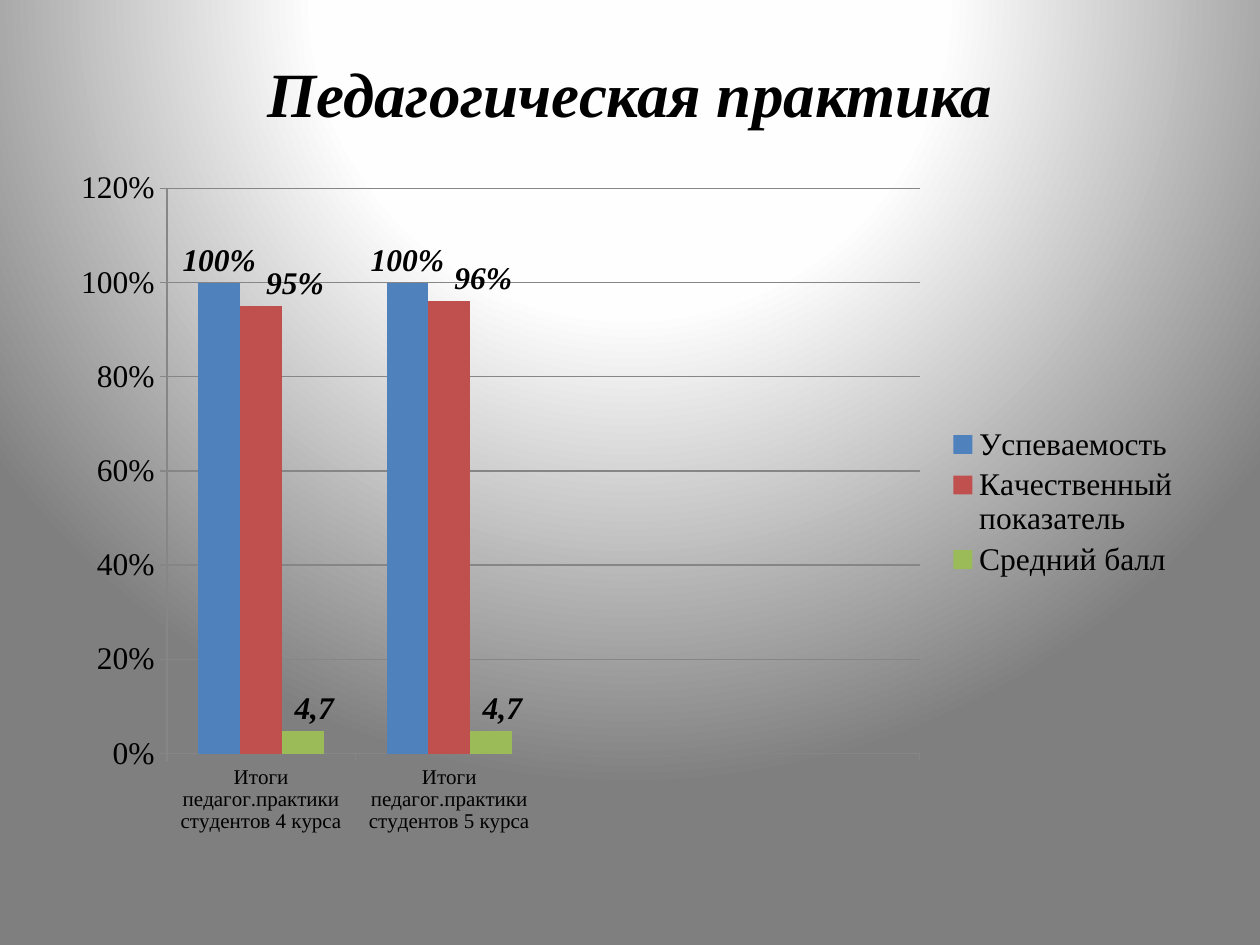
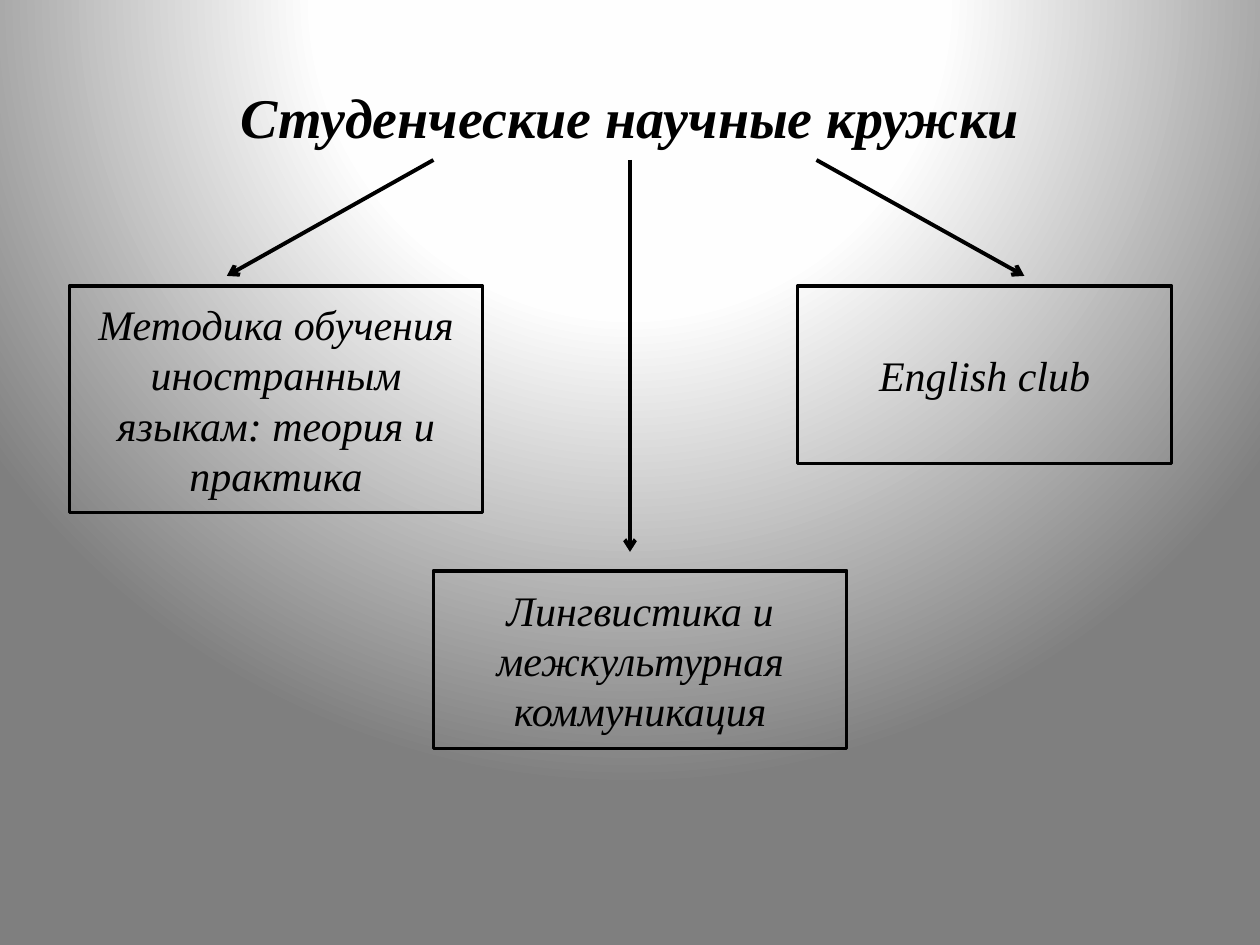
from dataclasses import dataclass

from lxml.etree import SubElement
from pptx import Presentation
from pptx.chart.data import CategoryChartData
from pptx.dml.color import RGBColor
from pptx.enum.chart import XL_CHART_TYPE, XL_LABEL_POSITION, XL_LEGEND_POSITION, XL_TICK_MARK
from pptx.enum.shapes import MSO_CONNECTOR, MSO_SHAPE
from pptx.enum.text import MSO_ANCHOR, PP_ALIGN
from pptx.oxml import parse_xml
from pptx.oxml.ns import nsdecls, qn
from pptx.util import Inches, Pt


@dataclass(frozen=True)
class Theme:
    font: str = "Times New Roman"
    ink: str = "000000"
    grid: str = "868686"
    glow: tuple = ((0, "FFFFFF"), (40, "FEFEFE"), (100, "7F7F7F"))
    series: tuple = ("4F81BD", "C0504D", "9BBB59")
    chart_title: int = 36
    clubs_title: int = 32
    club: int = 24
    chart_text: int = 18
    category: int = 12
    box_line: float = 2
    arrow_line: float = 2.25


THEME = Theme()

COURSES = [f"Итоги педагог.практики студентов {year} курса" for year in (4, 5)]
RESULTS = [
    ("Успеваемость", (1, 1), "0%"),
    ("Качественный показатель", (0.95, 0.96), "0%"),
    ("Средний балл", (0.047, 0.047), "0.00%"),
]
AVERAGE_GRADE = "4,7"
LABEL_SHIFTS = [0.03, 0.03, 0.01, 0.01]

CLUBS = [
    ("Методика обучения иностранным языкам: теория и практика", (0.55, 2.27, 3.28, 1.8)),
    ("Лингвистика и межкультурная коммуникация", (3.44, 4.53, 3.28, 1.41)),
    ("English club", (6.33, 2.27, 2.97, 1.41)),
]
ARROW_TOP = 1.27
ARROWS = [
    (3.44, ARROW_TOP, 1.8, 2.19),
    (5, ARROW_TOP, 5, 4.38),
    (6.48, ARROW_TOP, 8.13, 2.19),
]


def inches(values):
    return [Inches(value) for value in values]


def style_font(font, size, **format_values):
    values = {"name": THEME.font, "size": Pt(size), **format_values}
    for attribute, value in values.items():
        setattr(font, attribute, value)
    font.color.rgb = RGBColor.from_string(THEME.ink)


def style_line(line, color, width):
    line.color.rgb = RGBColor.from_string(color)
    line.width = Pt(width)


def set_background(master):
    master.background.fill.solid()
    stops = "".join(
        f'<a:gs pos="{place * 1000}"><a:srgbClr val="{color}"/></a:gs>'
        for place, color in THEME.glow
    )
    glow = parse_xml(
        f'<a:gradFill {nsdecls("a")} rotWithShape="1"><a:gsLst>{stops}</a:gsLst>'
        '<a:path path="circle"><a:fillToRect l="50000" t="-80000" r="50000" b="180000"/>'
        "</a:path></a:gradFill>"
    )
    background = master.element.xpath(".//p:bgPr")[0]
    background.replace(background[0], glow)


def write_centred(shape, text, size, **format_values):
    frame = shape.text_frame
    frame.word_wrap = True
    frame.vertical_anchor = MSO_ANCHOR.MIDDLE
    paragraph = frame.paragraphs[0]
    paragraph.alignment = PP_ALIGN.CENTER
    run = paragraph.add_run()
    run.text = text
    style_font(run.font, size, italic=True, **format_values)


def add_title(slide, text, size, height):
    title = slide.shapes.add_textbox(*inches((0.5, 0.3, 9, height)))
    write_centred(title, text, size, bold=True)


def add_club(slide, name, place):
    club = slide.shapes.add_shape(MSO_SHAPE.RECTANGLE, *inches(place))
    club.shadow.inherit = False
    club.fill.background()
    style_line(club.line, THEME.ink, THEME.box_line)
    write_centred(club, name, THEME.club)


def add_arrow(slide, ends):
    arrow = slide.shapes.add_connector(MSO_CONNECTOR.STRAIGHT, *inches(ends))
    style_line(arrow.line, THEME.ink, THEME.arrow_line)
    SubElement(arrow.get_or_add_ln(), qn("a:tailEnd"), type="arrow")
    SubElement(arrow.element.spPr, qn("a:effectLst"))


def manual_layout(**values):
    settings = "".join(f'<c:{key} val="{value}"/>' for key, value in values.items())
    return parse_xml(
        f'<c:layout {nsdecls("c")}><c:manualLayout>{settings}</c:manualLayout></c:layout>'
    )


def style_axes(chart):
    for axis, size in ((chart.category_axis, THEME.category), (chart.value_axis, THEME.chart_text)):
        style_font(axis.tick_labels.font, size)
        style_line(axis.format.line, THEME.grid, 0.75)
        axis.major_tick_mark = XL_TICK_MARK.OUTSIDE
    scale = chart.value_axis
    for attribute, value in {"minimum_scale": 0, "maximum_scale": 1.2, "major_unit": 0.2}.items():
        setattr(scale, attribute, value)
    scale.tick_labels.number_format = "0%"
    scale.tick_labels.number_format_is_linked = False
    style_line(scale.major_gridlines.format.line, THEME.grid, 0.75)


def style_series(series, color, number_format):
    series.format.fill.solid()
    series.format.fill.fore_color.rgb = RGBColor.from_string(color)
    series.invert_if_negative = False
    labels = series.data_labels
    label_values = {
        "show_value": True,
        "number_format": number_format,
        "number_format_is_linked": False,
        "position": XL_LABEL_POSITION.OUTSIDE_END,
    }
    for attribute, value in label_values.items():
        setattr(labels, attribute, value)
    style_font(labels.font, THEME.chart_text, bold=True, italic=True)


def shift_labels(chart):
    quality, grade = list(chart.plots[0].series)[1:]
    for series in (quality, grade):
        for index in range(len(COURSES)):
            label = series.points[index].data_label
            if series is grade:
                label.text_frame.text = AVERAGE_GRADE
                font = label.text_frame.paragraphs[0].runs[0].font
            else:
                font = label.font
            style_font(font, THEME.chart_text, bold=True, italic=True)
            label.position = XL_LABEL_POSITION.OUTSIDE_END
    for label, shift in zip(chart.element.xpath(".//c:dLbl"), LABEL_SHIFTS):
        label.insert(1, manual_layout(x=shift, y=0))


def add_results_chart(slide):
    data = CategoryChartData()
    data.categories = COURSES + ["", ""]
    for name, values, number_format in RESULTS:
        data.add_series(name, values + (None, None), number_format)
    chart = slide.shapes.add_chart(
        XL_CHART_TYPE.COLUMN_CLUSTERED, *inches((0.47, 1.25, 9, 5.47)), data
    ).chart
    style_font(chart.font, THEME.chart_text)
    chart.has_title = False
    chart.has_legend = True
    chart.legend.position = XL_LEGEND_POSITION.RIGHT
    chart.legend.include_in_layout = False
    style_font(chart.legend.font, THEME.chart_text)
    plot = chart.plots[0]
    for attribute, value in {"gap_width": 150, "overlap": 0, "vary_by_categories": False}.items():
        setattr(plot, attribute, value)
    style_axes(chart)
    for series, color, (_, _, number_format) in zip(plot.series, THEME.series, RESULTS):
        style_series(series, color, number_format)
    shift_labels(chart)
    plot_area = chart.element.xpath(".//c:plotArea")[0]
    for automatic in plot_area.findall(qn("c:layout")):
        plot_area.remove(automatic)
    plot_area.insert(
        0,
        manual_layout(
            layoutTarget="inner", xMode="edge", yMode="edge", x=0.095, y=0.045, w=0.664, h=0.82
        ),
    )


def main():
    deck = Presentation()
    deck.slide_width, deck.slide_height = inches((10, 7.5))
    set_background(deck.slide_master)
    blank = deck.slide_layouts[6]

    practice = deck.slides.add_slide(blank)
    add_title(practice, "Педагогическая практика", THEME.chart_title, 0.87)
    add_results_chart(practice)

    clubs = deck.slides.add_slide(blank)
    add_title(clubs, "Студенческие научные кружки", THEME.clubs_title, 1.25)
    for name, place in CLUBS:
        add_club(clubs, name, place)
    for ends in ARROWS:
        add_arrow(clubs, ends)

    deck.save("out.pptx")


if __name__ == "__main__":
    main()
